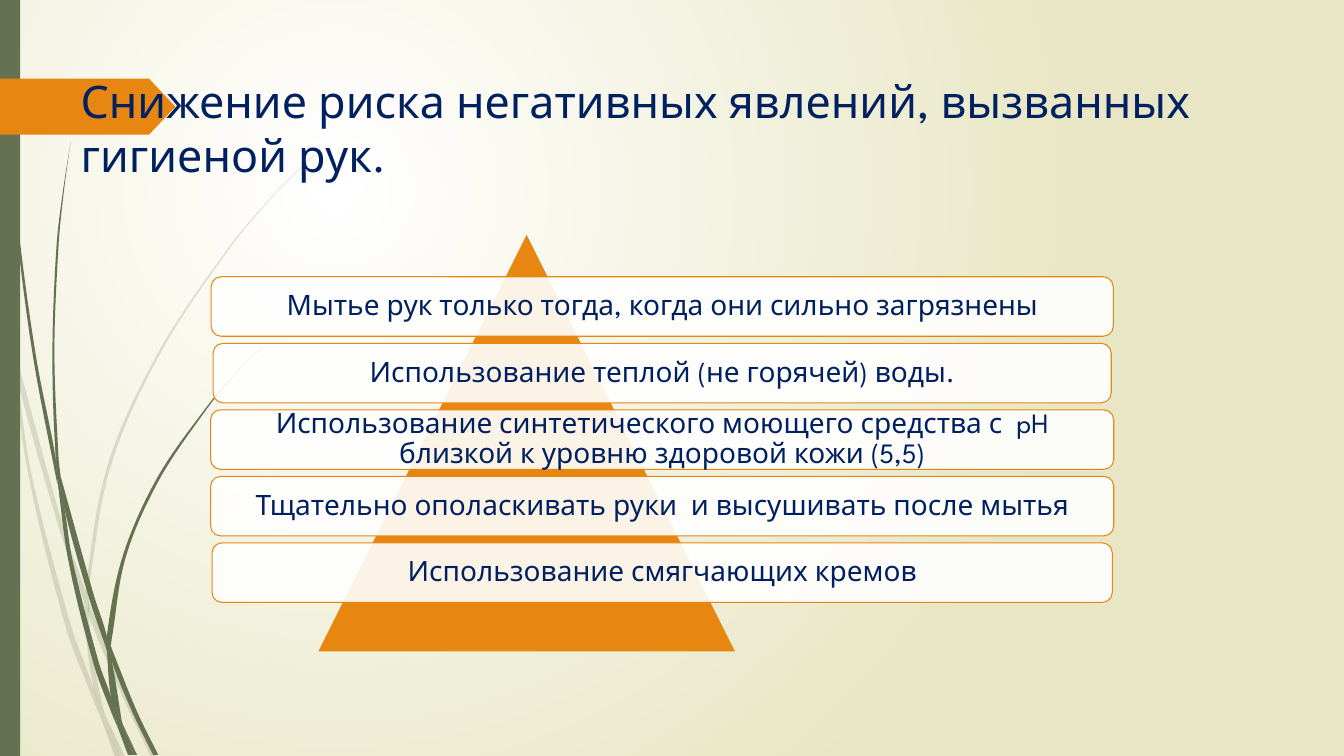
from dataclasses import dataclass
from math import dist

from lxml import etree
from pptx import Presentation
from pptx import util as u
from pptx.dml.color import RGBColor
from pptx.enum import shapes, text
from pptx.oxml import parse_xml
from pptx.oxml.ns import nsdecls, qn

Point = tuple[float, float]
COLORS = {"leaf": "647252", "accent": "E78712", "ink": "002060",
          "white": "FFFFFF", "sand": "E8E6C4"}
FONT = "League Spartan"
GRID = 0.72  # points per unit of the grass coordinates


@dataclass(frozen=True)
class Blade:
    """A piece of grass, bounded by two edges that run downwards."""
    left: list[Point]
    right: list[Point]


@dataclass(frozen=True)
class Advice:
    words: str
    width: float


PALE_GRASS = [
    Blade([(0, 282), (9, 322), (11, 350)], [(0, 299), (10, 344), (11, 350)]),
    Blade([(14, 345), (17, 376), (58, 522), (84, 599)], [(14, 345), (62, 520), (85, 586)]),
    Blade([(88, 596), (88, 610), (123, 694), (150, 751)],
          [(88, 596), (92, 607), (127, 692), (155, 751)]),
    Blade([(105, 711), (119, 751)], [(105, 711), (124, 751)]),
    Blade([(11, 350), (28, 470), (65, 621), (92, 693), (101, 714)],
          [(11, 350), (17, 376), (31, 469), (70, 619), (93, 683), (99, 707), (101, 714)]),
    Blade([(84, 599), (87, 646), (93, 683), (96, 692), (105, 711)],
          [(84, 599), (88, 610), (91, 646), (103, 706), (105, 711)]),
    Blade([(312, 153), (289, 175), (268, 197), (228, 244), (158, 348), (107, 461),
           (85, 584), (88, 596)],
          [(312, 154), (290, 175), (268, 198), (229, 245), (160, 349), (110, 462),
           (88, 584), (88, 596)]),
    Blade([(101, 714), (114, 751)], [(101, 714), (119, 751)]),
    Blade([(85, 586), (84, 599), (88, 608)], [(85, 586), (88, 596), (88, 610)]),
    Blade([(93, 683), (99, 707), (101, 714), (119, 751)],
          [(93, 683), (96, 692), (105, 711), (119, 751)]),
]
DARK_GRASS = [
    Blade([(3, 0), (4, 48), (7, 110), (17, 233), (33, 355), (57, 481)],
          [(4, 0), (5, 48), (8, 109), (19, 232), (36, 355), (55, 453), (57, 481)]),
    Blade([(60, 472), (64, 505), (88, 592), (106, 645)],
          [(60, 472), (93, 590), (106, 631), (106, 645)]),
    Blade([(110, 641), (111, 656), (132, 708), (152, 749)],
          [(110, 641), (113, 649), (136, 706), (157, 749)]),
    Blade([(57, 477), (68, 557), (93, 659), (111, 708), (117, 722)],
          [(57, 477), (64, 505), (72, 556), (98, 657), (110, 691), (116, 717), (117, 722)]),
    Blade([(70, 141), (62, 193), (56, 245), (52, 349), (55, 449), (60, 472)],
          [(70, 141), (63, 193), (58, 245), (54, 349), (58, 453), (60, 472)]),
    Blade([(122, 719), (133, 749)], [(122, 719), (136, 749)]),
    Blade([(55, 449), (57, 477), (64, 505)], [(55, 449), (60, 472), (64, 505)]),
    Blade([(260, 344), (245, 358), (231, 373), (204, 405), (156, 474), (122, 551),
           (106, 631), (110, 641)],
          [(261, 344), (245, 359), (231, 374), (205, 406), (158, 476), (125, 552),
           (111, 633), (110, 641)]),
    Blade([(117, 722), (127, 749)], [(117, 722), (131, 749)]),
    Blade([(106, 645), (110, 691), (116, 706), (122, 719)],
          [(106, 645), (111, 656), (121, 716), (122, 719)]),
    Blade([(106, 631), (106, 645), (111, 656)], [(106, 631), (110, 641), (111, 656)]),
    Blade([(110, 691), (116, 717), (117, 722), (130, 749)],
          [(110, 691), (116, 706), (122, 719), (133, 749)]),
]
ADVICE = [
    Advice("Мытье рук только тогда, когда они сильно загрязнены", 644.4),
    Advice("Использование теплой (не горячей) воды.", 641.5),
    Advice("Использование синтетического моющего средства с  pH близкой к уровню "
           "здоровой кожи (5,5)", 645.1),
    Advice("Тщательно ополаскивать руки  и высушивать после мытья", 645.1),
    Advice("Использование смягчающих кремов", 643),
]


def paint(shape, color: str, opacity: int = 100, line: str | None = None) -> None:
    shape.shadow.inherit = False
    shape.fill.solid()
    shape.fill.fore_color.rgb = RGBColor.from_string(COLORS[color])
    if opacity < 100:
        tint = shape.element.spPr.find(qn("a:solidFill"))[0]
        etree.SubElement(tint, qn("a:alpha"), val=str(opacity * 1000))
    if line:
        shape.line.color.rgb = RGBColor.from_string(COLORS[line])
        shape.line.width = u.Pt(0.75)
    else:
        shape.line.fill.background()


def add_block(page, kind, left: float, top: float, width: float, height: float,
              color: str, **style):
    block = page.shapes.add_shape(kind, u.Pt(left), u.Pt(top), u.Pt(width), u.Pt(height))
    paint(block, color, **style)
    return block


def write(shape, words: str, *, size: float, align, anchor, spacing: float = 1.0,
          side: float = 7.2, edge: float = 3.6) -> None:
    box = shape.text_frame
    box.word_wrap = True
    box.auto_size = text.MSO_AUTO_SIZE.NONE
    box.vertical_anchor = anchor
    box.margin_left = box.margin_right = u.Pt(side)
    box.margin_top = box.margin_bottom = u.Pt(edge)
    para = box.paragraphs[0]
    para.alignment = align
    para.line_spacing = spacing
    span = para.add_run()
    span.text = words
    span.font.name = FONT
    span.font.size = u.Pt(size)
    span.font.color.rgb = RGBColor.from_string(COLORS["ink"])


def handle(start: Point, before: Point, after: Point, reach: float) -> Point:
    """Return a control point beside start, parallel to the line before-after."""
    scale = reach / dist(before, after)
    return tuple(s + (a - b) * scale for s, b, a in zip(start, before, after))


def bend(lines: list, knots: list[Point]) -> None:
    """Turn the straight segments between the knots into smooth curves."""
    padded = [knots[0], *knots, knots[-1]]
    for line, a, b, c, d in zip(lines, padded, padded[1:], padded[2:], padded[3:]):
        reach = dist(b, c) / 3
        line.tag = qn("a:cubicBezTo")
        for place, (x, y) in enumerate((handle(b, a, c, reach), handle(c, d, b, reach))):
            control = etree.Element(qn("a:pt"), x=str(round(x)), y=str(round(y)))
            line.insert(place, control)


def add_blade(page, blade: Blade, opacity: int) -> None:
    outline = [(u.Pt(x * GRID), u.Pt(y * GRID)) for x, y in blade.left + blade.right[::-1]]
    builder = page.shapes.build_freeform(*outline[0])
    builder.add_line_segments(outline[1:], close=False)
    shape = builder.convert_to_shape()
    track = shape.element.find(".//" + qn("a:path"))
    lines = track.findall(qn("a:lnTo"))
    knots = [(int(pt.get("x")), int(pt.get("y"))) for pt in track.iter(qn("a:pt"))]
    count = len(blade.left)
    bend(lines[:count - 1], knots[:count])
    bend(lines[count:], knots[count:])
    etree.SubElement(track, qn("a:close"))
    paint(shape, "leaf", opacity=opacity)


def set_background(page) -> None:
    page.background.fill.gradient()
    old = page.element.find(".//" + qn("a:gradFill"))
    stops = "".join(f'<a:gs pos="{pos}"><a:srgbClr val="{COLORS[color]}"/></a:gs>'
                    for pos, color in ((0, "white"), (100000, "sand")))
    glow = parse_xml(
        f'<a:gradFill {nsdecls("a")} rotWithShape="1"><a:gsLst>{stops}</a:gsLst>'
        '<a:path path="circle"><a:fillToRect l="50000" t="50000" r="100000" b="100000"/>'
        '</a:path></a:gradFill>')
    old.getparent().replace(old, glow)


def main() -> None:
    deck = Presentation()
    deck.slide_width, deck.slide_height = u.Pt(960), u.Pt(540)
    page = deck.slides.add_slide(deck.slide_layouts[5])
    kinds = shapes.MSO_SHAPE

    # Background, grass, side bar and tag
    set_background(page)
    for grass, opacity in ((PALE_GRASS, 20), (DARK_GRASS, 100)):
        for blade in grass:
            add_blade(page, blade, opacity)
    add_block(page, kinds.RECTANGLE, 0, 0, 14.4, 540, "leaf")
    tag = add_block(page, kinds.PENTAGON, 0, 56.2, 125.3, 40, "accent")
    tag.adjustments[0] = 0.47

    # Title, in front of the tag
    title = page.shapes.title
    title.left, title.top = u.Pt(50.4), u.Pt(49)
    title.width, title.height = u.Pt(902), u.Pt(100.8)
    write(title, "Снижение риска негативных явлений, вызванных гигиеной рук.", size=32,
          align=text.PP_ALIGN.LEFT, anchor=text.MSO_ANCHOR.TOP)
    tag.element.addnext(title.element)

    # Pyramid with the advice list across it
    add_block(page, kinds.ISOSCELES_TRIANGLE, 227.5, 167.8, 297.4, 297.4, "accent")
    for row, advice in enumerate(ADVICE):
        bar = add_block(page, kinds.ROUNDED_RECTANGLE, 473 - advice.width / 2,
                        197.7 + 47.52 * row, advice.width, 42.5, "white",
                        opacity=90, line="accent")
        write(bar, advice.words, size=20, align=text.PP_ALIGN.CENTER,
              anchor=text.MSO_ANCHOR.MIDDLE, spacing=0.9, side=5.76, edge=5.76)

    deck.save("out.pptx")


if __name__ == "__main__":
    main()
